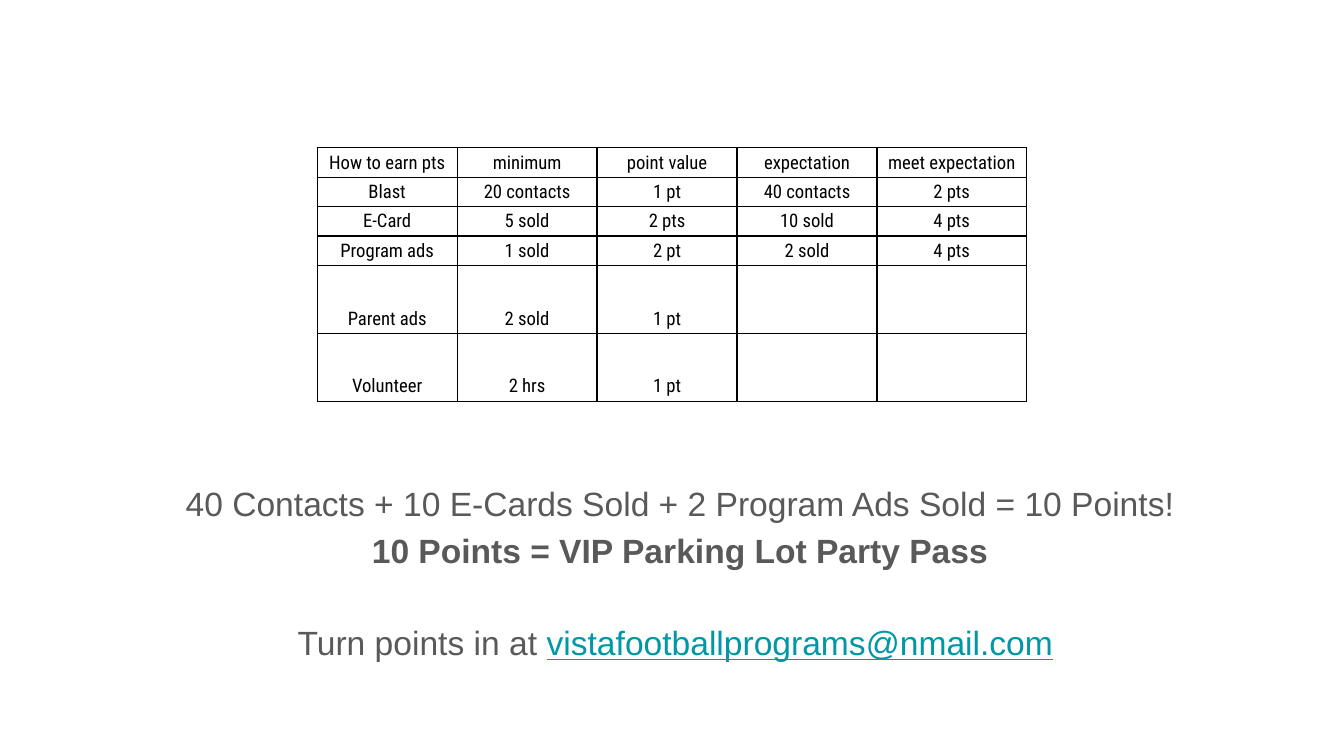
from lxml.etree import SubElement
from pptx import Presentation
from pptx.dml.color import RGBColor
from pptx.enum.text import MSO_ANCHOR, MSO_AUTO_SIZE, PP_ALIGN
from pptx.oxml.ns import qn
from pptx.util import Inches, Pt

BLACK = RGBColor(0x00, 0x00, 0x00)
GRAY = RGBColor(0x59, 0x59, 0x59)
TEAL = RGBColor(0x00, 0x97, 0xA7)

POINT_ROWS = [
    ["How to earn pts", "minimum", "point value", "expectation", "meet expectation"],
    ["Blast", "20 contacts", "1 pt", "40 contacts", "2 pts"],
    ["E-Card", "5 sold", "2 pts", "10 sold", "4 pts"],
    ["Program ads", "1 sold", "2 pt", "2 sold", "4 pts"],
    ["Parent ads", "2 sold", "1 pt", "", ""],
    ["Volunteer", "2 hrs", "1 pt", "", ""],
]
COLUMN_WIDTHS = [Pt(75)] * 4 + [Pt(80)]
ROW_HEIGHT = Pt(15.75)

MESSAGE = [
    ([("40 Contacts + 10 E-Cards Sold + 2 Program Ads Sold = 10 Points!", GRAY)], False, 0),
    ([("10 Points = VIP Parking Lot Party Pass", GRAY)], True, 0),
    ([("Turn points in at ", GRAY), ("vistafootballprograms@nmail.com", TEAL), (" ", GRAY)],
     False, 24.8),
]


def add_borders(cell):
    properties = cell._tc.get_or_add_tcPr()
    for position, side in enumerate(("a:lnL", "a:lnR", "a:lnT", "a:lnB")):
        line = properties.makeelement(qn(side), {"w": str(Pt(0.75))})
        fill = SubElement(line, qn("a:solidFill"))
        SubElement(fill, qn("a:srgbClr"), val=str(BLACK))
        properties.insert(position, line)


def format_cell(cell, text):
    cell.fill.background()
    add_borders(cell)
    margin = Pt(2) if text else Inches(0.1)
    cell.margin_left = cell.margin_right = margin
    cell.margin_top = cell.margin_bottom = margin
    if text:
        cell.vertical_anchor = MSO_ANCHOR.BOTTOM
        cell.text = text
        paragraph = cell.text_frame.paragraphs[0]
        paragraph.alignment = PP_ALIGN.CENTER
        paragraph.space_before = Pt(5)
        paragraph.font.size = Pt(10)
        paragraph.font.name = "Roboto Condensed"
        paragraph.font.color.rgb = BLACK


def add_points_table(slide, left, top):
    table = slide.shapes.add_table(
        len(POINT_ROWS), len(COLUMN_WIDTHS), Inches(left), Inches(top),
        sum(COLUMN_WIDTHS), ROW_HEIGHT * len(POINT_ROWS)).table
    table.first_row = table.horz_banding = False
    for column, width in zip(table.columns, COLUMN_WIDTHS):
        column.width = width
    for row, texts in zip(table.rows, POINT_ROWS):
        row.height = ROW_HEIGHT
        for cell, text in zip(row.cells, texts):
            format_cell(cell, text)


def format_paragraph(paragraph, bold, gap):
    paragraph.alignment = PP_ALIGN.CENTER
    paragraph.line_spacing = 1.15
    paragraph.space_before = Pt(gap)
    properties = paragraph._p.get_or_add_pPr()
    properties.set("marL", str(Inches(0.12)))
    properties.set("indent", "0")
    SubElement(properties, qn("a:buNone"))
    paragraph.font.size = Pt(18)
    paragraph.font.name = "Arial"
    paragraph.font.bold = bold


def place_message(body, left, top, width, height):
    body.left, body.top = Inches(left), Inches(top)
    body.width, body.height = Inches(width), Inches(height)
    frame = body.text_frame
    frame.word_wrap = True
    frame.auto_size = MSO_AUTO_SIZE.NONE
    frame.vertical_anchor = MSO_ANCHOR.TOP
    frame.margin_left = frame.margin_right = Inches(0.1)
    frame.margin_top = frame.margin_bottom = Inches(0.1)
    for index, (parts, bold, gap) in enumerate(MESSAGE):
        paragraph = frame.add_paragraph() if index else frame.paragraphs[0]
        format_paragraph(paragraph, bold, gap)
        for text, color in parts:
            run = paragraph.add_run()
            run.text = text
            run.font.size = Pt(18)
            run.font.name = "Arial"
            run.font.bold = bold
            run.font.color.rgb = color
            run.font.underline = color == TEAL


def main():
    presentation = Presentation()
    presentation.slide_width = Inches(10)
    presentation.slide_height = Inches(10) * 9 // 16
    slide = presentation.slides.add_slide(presentation.slide_layouts[1])
    title = slide.shapes.title.element
    title.getparent().remove(title)
    place_message(slide.placeholders[1], 0.34, 3.45, 9.32, 1.51)
    add_points_table(slide, 2.36, 1.1)
    presentation.save("out.pptx")


if __name__ == "__main__":
    main()
